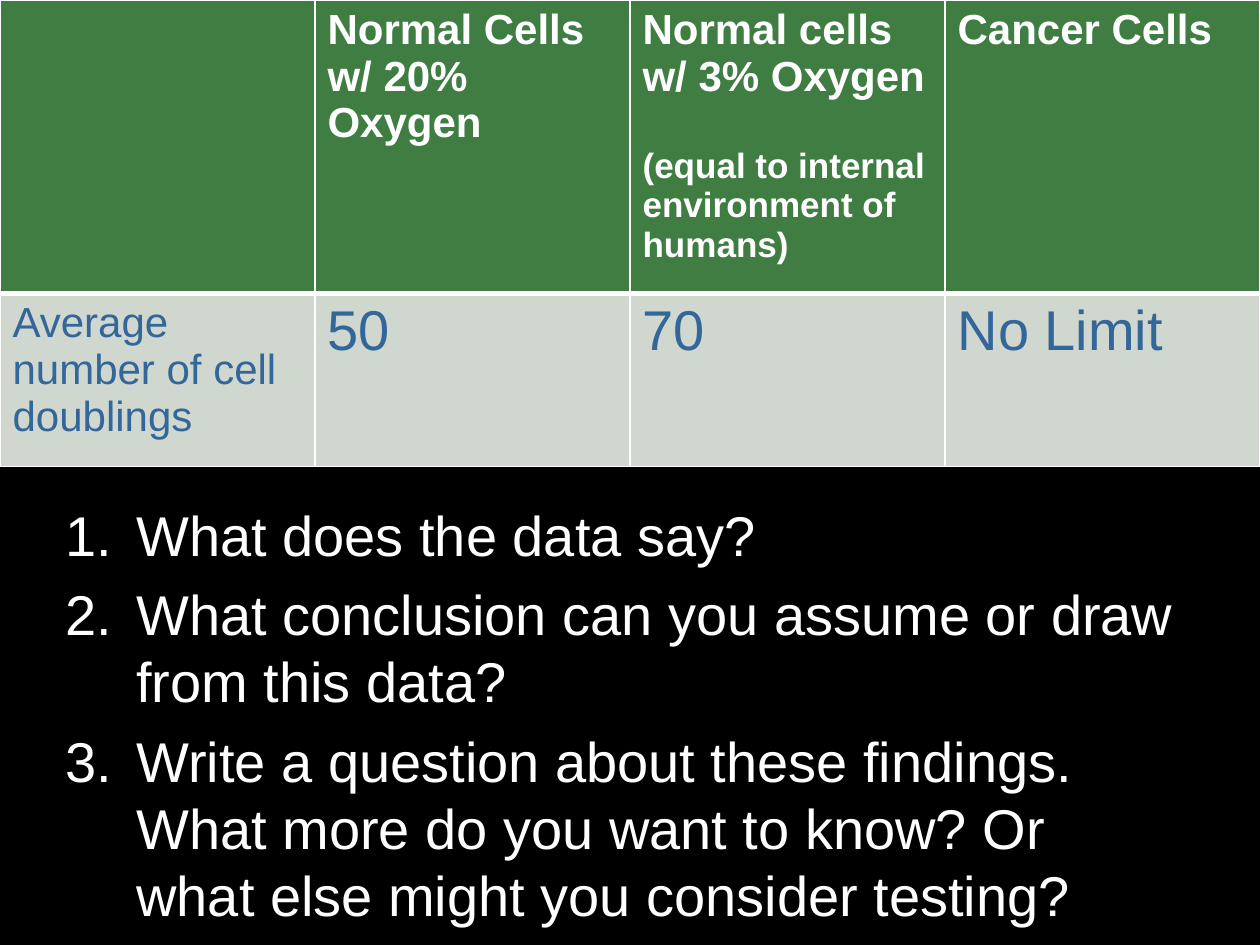
from dataclasses import dataclass

from lxml import etree
from pptx import Presentation
from pptx.dml.color import RGBColor
from pptx.oxml.ns import qn
from pptx.util import Cm, Pt

FONT = "Arial"
WHITE, BLACK, BLUE = "FFFFFF", "000000", "336699"
GREEN, PALE = "3F7D43", "CFD7CF"


@dataclass
class Part:
    text: str
    size: int
    gap: float = 0  # points above the paragraph


@dataclass
class Row:
    high: float  # cm
    fill: str
    ink: str
    bold: bool
    base: int  # bottom border, points
    cells: list[list[Part]]


ROWS = [
    Row(5.92, GREEN, WHITE, True, 3, [
        [],
        [Part("Normal Cells w/ 20% Oxygen", 24)],
        [Part("Normal cells w/ 3% Oxygen", 24),
         Part("(equal to internal environment of humans)", 20, 27)],
        [Part("Cancer Cells", 24)],
    ]),
    Row(3.48, PALE, BLUE, False, 1, [
        [Part("Average number of cell doublings", 24)],
        [Part("50", 32)],
        [Part("70", 32)],
        [Part("No Limit", 32)],
    ]),
]

TASKS = [
    Part("What does the data say?", 32, 7),
    Part("What conclusion can you assume or draw from this data?", 32, 7),
    Part("Write a question about these findings. What more do you want to know? "
         "Or what else might you consider testing?", 32, 7),
]


def paint(fill, tone: str) -> None:
    fill.solid()
    fill.fore_color.rgb = RGBColor.from_string(tone)


def write(frame, parts: list[Part], ink: str, bold: bool = False) -> None:
    for i, part in enumerate(parts):
        para = frame.paragraphs[0] if i == 0 else frame.add_paragraph()
        para.space_before = Pt(part.gap)
        run = para.add_run()
        run.text = part.text
        font = run.font
        font.name, font.size, font.bold = FONT, Pt(part.size), bold
        paint(font.fill, ink)


def edge(cell, base: int) -> None:
    """Give a cell white borders; they must come before its fill."""
    props = cell._tc.get_or_add_tcPr()
    for i, side in enumerate("LRTB"):
        wide = base if side == "B" else 1
        line = etree.Element(qn(f"a:ln{side}"), w=str(Pt(wide)))
        fill = etree.SubElement(line, qn("a:solidFill"))
        etree.SubElement(fill, qn("a:srgbClr"), val=WHITE)
        props.insert(i, line)


def number(para) -> None:
    """Number a paragraph with a hanging indent."""
    props = para._p.get_or_add_pPr()
    props.set("marL", str(Cm(1.43)))
    props.set("indent", str(-Cm(1.43)))
    etree.SubElement(props, qn("a:buFont"), typeface=FONT)
    etree.SubElement(props, qn("a:buAutoNum"), type="arabicPeriod")


def draw_table(slide, rows: list[Row]) -> None:
    high = sum(row.high for row in rows)
    cols = len(rows[0].cells)
    table = slide.shapes.add_table(len(rows), cols, 0, 0, Cm(25.4), Cm(high)).table
    for r, row in enumerate(rows):
        table.rows[r].height = Cm(row.high)
        for c, parts in enumerate(row.cells):
            cell = table.cell(r, c)
            paint(cell.fill, row.fill)
            edge(cell, row.base)
            write(cell.text_frame, parts, row.ink, row.bold)


def draw_tasks(slide, tasks: list[Part]) -> None:
    box = slide.shapes.add_textbox(Cm(1.07), Cm(9.96), Cm(22.86), Cm(12.57))
    frame = box.text_frame
    frame.word_wrap = True
    write(frame, tasks, WHITE)
    for para in frame.paragraphs:
        number(para)


def main() -> None:
    deck = Presentation()
    deck.slide_width, deck.slide_height = Cm(25.4), Cm(19.05)
    slide = deck.slides.add_slide(deck.slide_layouts[6])
    paint(slide.background.fill, BLACK)

    # Questions below, data table on top
    draw_tasks(slide, TASKS)
    draw_table(slide, ROWS)
    deck.save("out.pptx")


if __name__ == "__main__":
    main()
